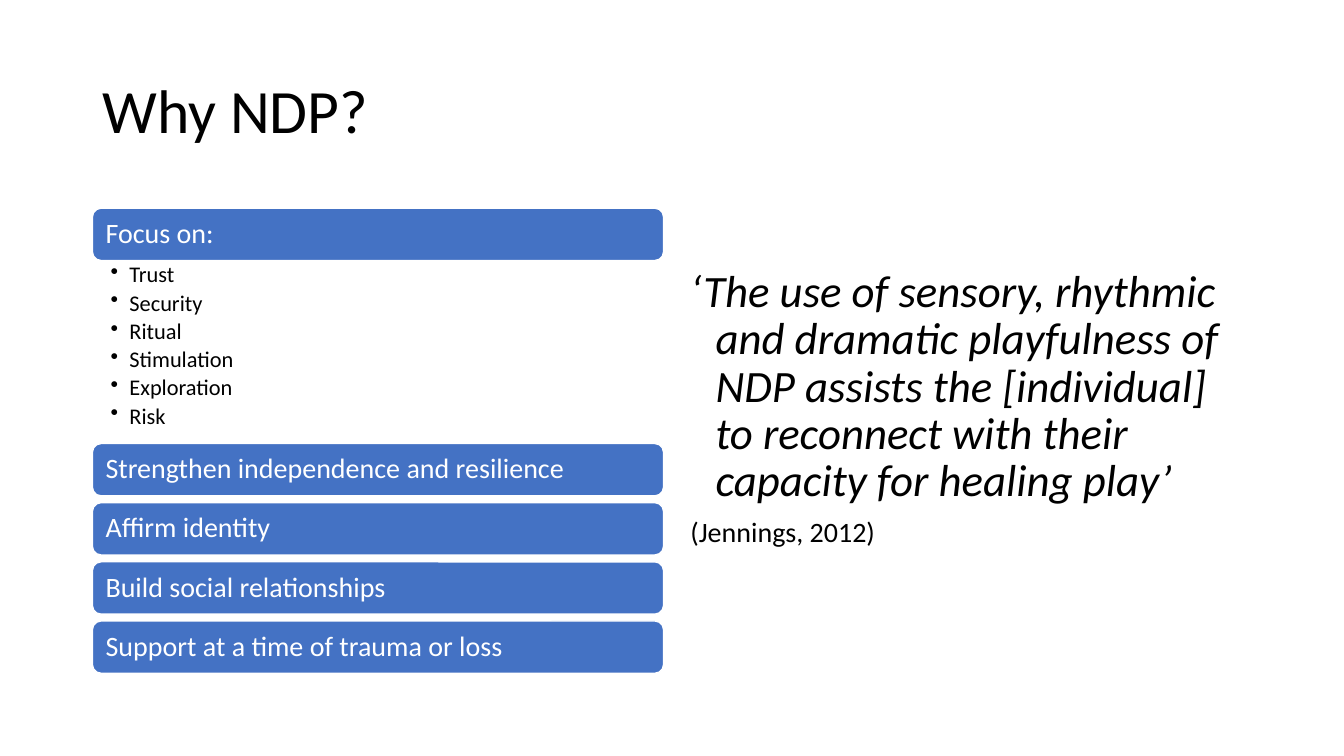
from lxml import etree
from pptx import Presentation
from pptx.dml.color import RGBColor
from pptx.enum.shapes import MSO_SHAPE as Shape
from pptx.enum.text import MSO_ANCHOR as Anchor, PP_ALIGN as Align
from pptx.oxml.ns import qn
from pptx.util import Pt

BLACK = RGBColor(0x00, 0x00, 0x00)
WHITE = RGBColor(0xFF, 0xFF, 0xFF)
BLUE = RGBColor(0x44, 0x72, 0xC4)

BAR_HEIGHT = 37.4
BAR_PITCH = 42.25
FOCUS_POINTS = ["Trust", "Security", "Ritual", "Stimulation", "Exploration", "Risk"]
AIMS = [
    "Strengthen independence and resilience",
    "Affirm identity",
    "Build social relationships",
    "Support at a time of trauma or loss",
]
QUOTE = (
    "‘The use of sensory, rhythmic and dramatic playfulness of NDP "
    "assists the [individual] to reconnect with their capacity for healing play’"
)


def write_text(paragraph, text, size, color=BLACK, italic=False, spacing=0.9,
               before=0, after=0, hanging=0, bullet=None):
    properties = paragraph._p.get_or_add_pPr()
    if hanging:
        properties.set("marL", str(Pt(hanging)))
        properties.set("indent", str(-Pt(hanging)))
    if bullet:
        etree.SubElement(properties, qn("a:buChar")).set("char", bullet)
    paragraph.alignment = Align.LEFT
    paragraph.line_spacing = spacing
    paragraph.space_before = Pt(before)
    paragraph.space_after = Pt(after)
    run = paragraph.add_run()
    run.text = text
    run.font.name = "Calibri"
    run.font.size = Pt(size)
    run.font.italic = italic
    run.font.color.rgb = color


def set_frame(shape, anchor, margins):
    frame = shape.text_frame
    frame.word_wrap = True
    frame.vertical_anchor = anchor
    frame.margin_left, frame.margin_top, frame.margin_right, frame.margin_bottom = map(Pt, margins)
    return frame


def add_text_frame(slide, left, top, width, height, anchor=Anchor.TOP,
                   margins=(7.2, 3.6, 7.2, 3.6)):
    box = slide.shapes.add_textbox(Pt(left), Pt(top), Pt(width), Pt(height))
    return set_frame(box, anchor, margins)


def add_title(slide, left, top, width, height):
    frame = add_text_frame(slide, left, top, width, height, Anchor.MIDDLE)
    write_text(frame.paragraphs[0], "Why NDP?", 44)


def add_bar(slide, left, top, width, text):
    bar = slide.shapes.add_shape(
        Shape.ROUNDED_RECTANGLE, Pt(left), Pt(top), Pt(width), Pt(BAR_HEIGHT))
    bar.shadow.inherit = False
    bar.fill.solid()
    bar.fill.fore_color.rgb = BLUE
    bar.line.color.rgb = WHITE
    bar.line.width = Pt(1)
    frame = set_frame(bar, Anchor.MIDDLE, (7.6, 5, 7.6, 5))
    write_text(frame.paragraphs[0], text, 20, WHITE)


def add_aims(slide, left, top, width, list_height):
    add_bar(slide, left, top, width, "Focus on:")
    list_top = top + BAR_HEIGHT
    frame = add_text_frame(slide, left, list_top, width, list_height,
                           margins=(13, 2.2, 11.5, 2.2))
    for index, point in enumerate(FOCUS_POINTS):
        paragraph = frame.add_paragraph() if index else frame.paragraphs[0]
        write_text(paragraph, point, 16, after=2.9, hanging=13.5, bullet="•")
    for index, aim in enumerate(AIMS):
        add_bar(slide, left, list_top + list_height + index * BAR_PITCH, width, aim)


def add_quote(slide, left, top, width, height):
    frame = add_text_frame(slide, left, top, width, height)
    write_text(frame.paragraphs[0], QUOTE, 32, italic=True, spacing=0.88, hanging=18)
    write_text(frame.add_paragraph(), "(Jennings, 2012)", 20,
               spacing=0.88, before=9, hanging=18)


def main():
    presentation = Presentation()
    presentation.slide_width = Pt(960)
    presentation.slide_height = Pt(540)
    slide = presentation.slides.add_slide(presentation.slide_layouts[6])
    add_title(slide, 66, 28.8, 828, 104.4)
    add_aims(slide, 66, 148.7, 408, 130.7)
    add_quote(slide, 486, 189, 408, 297.5)
    presentation.save("out.pptx")


if __name__ == "__main__":
    main()
